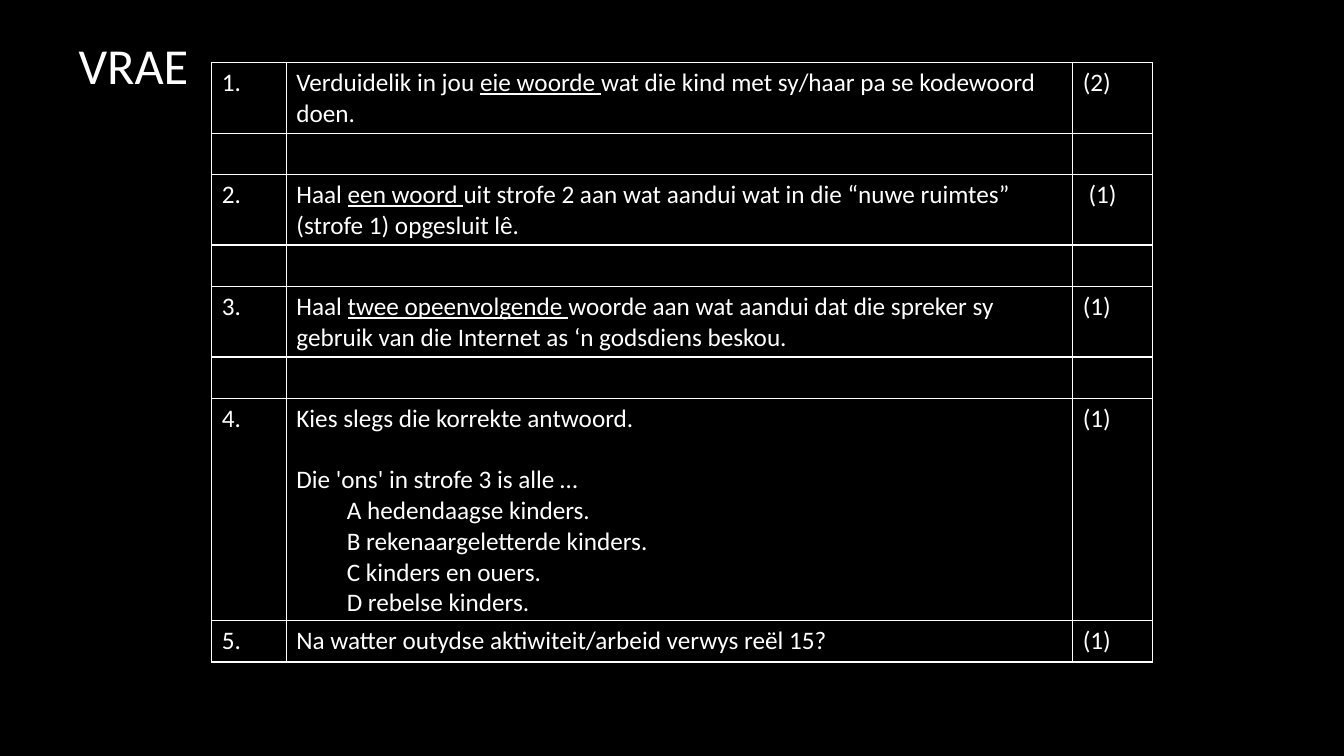
"""Build the VRAE slide: a title and a table of questions with marks."""
from lxml.etree import SubElement
from pptx import Presentation
from pptx.dml.color import RGBColor
from pptx.enum.text import MSO_ANCHOR, MSO_AUTO_SIZE, PP_ALIGN
from pptx.oxml.ns import qn
from pptx.util import Inches, Pt

COLUMN_WIDTHS = (0.74, 7.8, 0.79)
ROW_HEIGHT = 0.41
EMPTY_ROW = ("", "", "")
QUESTIONS = [
    ("1.", "Verduidelik in jou _eie woorde _wat die kind met sy/haar pa se kodewoord doen.", "(2)"),
    EMPTY_ROW,
    ("2.", "Haal _een woord _uit strofe 2 aan wat aandui wat in die “nuwe ruimtes” "
           "(strofe 1) opgesluit lê.", " (1)"),
    EMPTY_ROW,
    ("3.", "Haal _twee opeenvolgende _woorde aan wat aandui dat die spreker sy gebruik "
           "van die Internet as ‘n godsdiens beskou.", "(1)"),
    EMPTY_ROW,
    ("4.", "Kies slegs die korrekte antwoord.", "(1)"),
    ("5.", "Na watter outydse aktiwiteit/arbeid verwys reël 15?", "(1)"),
]
CHOICE_ROW = 6
CHOICE_STEM = "Die 'ons' in strofe 3 is alle …"
CHOICES = ("A hedendaagse kinders.", "B rekenaargeletterde kinders.",
           "C kinders en ouers.", "D rebelse kinders.")


def color(value):
    """Turn a hex string into a colour."""
    return RGBColor.from_string(value)


def write(para, text, size=18, font="Calibri", ink="FFFFFF", before=0, level=0, indent=0):
    """Write text into a paragraph, underlining what stands between underscores."""
    para.alignment = PP_ALIGN.LEFT
    para.space_before = Pt(before)
    para.level = level
    para.font.size = Pt(size)
    if indent:
        properties = para._p.get_or_add_pPr()
        properties.set("marL", str(Inches(indent)))
        properties.set("indent", "0")
    for index, part in enumerate(text.split("_")):
        if part:
            span = para.add_run()
            span.text = part
            span.font.size = Pt(size)
            span.font.name = font
            span.font.color.rgb = color(ink)
            if index % 2:
                span.font.underline = True


class SlideBuilder:
    """Hold the style and the current slide."""

    def __init__(self, deck, background="000000", line="FFFFFF"):
        """Add a title-only slide with a plain background."""
        self.line = line
        self.page = deck.slides.add_slide(deck.slide_layouts[5])
        self.page.background.fill.solid()
        self.page.background.fill.fore_color.rgb = color(background)

    def title(self, text, left, top, width, height):
        """Place and fill the title placeholder."""
        box = self.page.shapes.title
        box.left, box.top = Inches(left), Inches(top)
        box.width, box.height = Inches(width), Inches(height)
        frame = box.text_frame
        frame.word_wrap = True
        frame.auto_size = MSO_AUTO_SIZE.SHAPE_TO_FIT_TEXT
        frame.vertical_anchor = MSO_ANCHOR.TOP
        write(frame.paragraphs[0], text, size=36)

    def outline(self, cell):
        """Give a cell thin borders and no fill."""
        properties = cell._tc.get_or_add_tcPr()
        for side in ("lnL", "lnR", "lnT", "lnB"):
            border = SubElement(properties, qn(f"a:{side}"), w=str(Pt(1)))
            fill = SubElement(border, qn("a:solidFill"))
            SubElement(fill, qn("a:srgbClr"), val=self.line)
        cell.fill.background()

    def table(self, rows, left, top, height):
        """Add a bordered table and return it."""
        holder = self.page.shapes.add_table(
            len(rows), len(COLUMN_WIDTHS), Inches(left), Inches(top),
            Inches(sum(COLUMN_WIDTHS)), Inches(height))
        table = holder.table
        table.first_row = table.horz_banding = False
        for column, width in zip(table.columns, COLUMN_WIDTHS):
            column.width = Inches(width)
        for row, texts in zip(table.rows, rows):
            row.height = Inches(ROW_HEIGHT)
            for cell, text in zip(row.cells, texts):
                self.outline(cell)
                write(cell.text_frame.paragraphs[0], text)
        holder.height = Inches(height)
        return table


def main():
    """Build and save the deck."""
    deck = Presentation()
    deck.slide_width, deck.slide_height = Inches(13.33), Inches(7.5)
    builder = SlideBuilder(deck)
    builder.title("VRAE", 0.68, 0.29, 6.69, 0.71)
    table = builder.table(QUESTIONS, 2.1, 0.62, 5.92)
    frame = table.cell(CHOICE_ROW, 1).text_frame
    write(frame.add_paragraph(), CHOICE_STEM, before=22)
    for choice in CHOICES:
        write(frame.add_paragraph(), choice, level=1, indent=0.5)
    deck.save("out.pptx")


if __name__ == "__main__":
    main()
